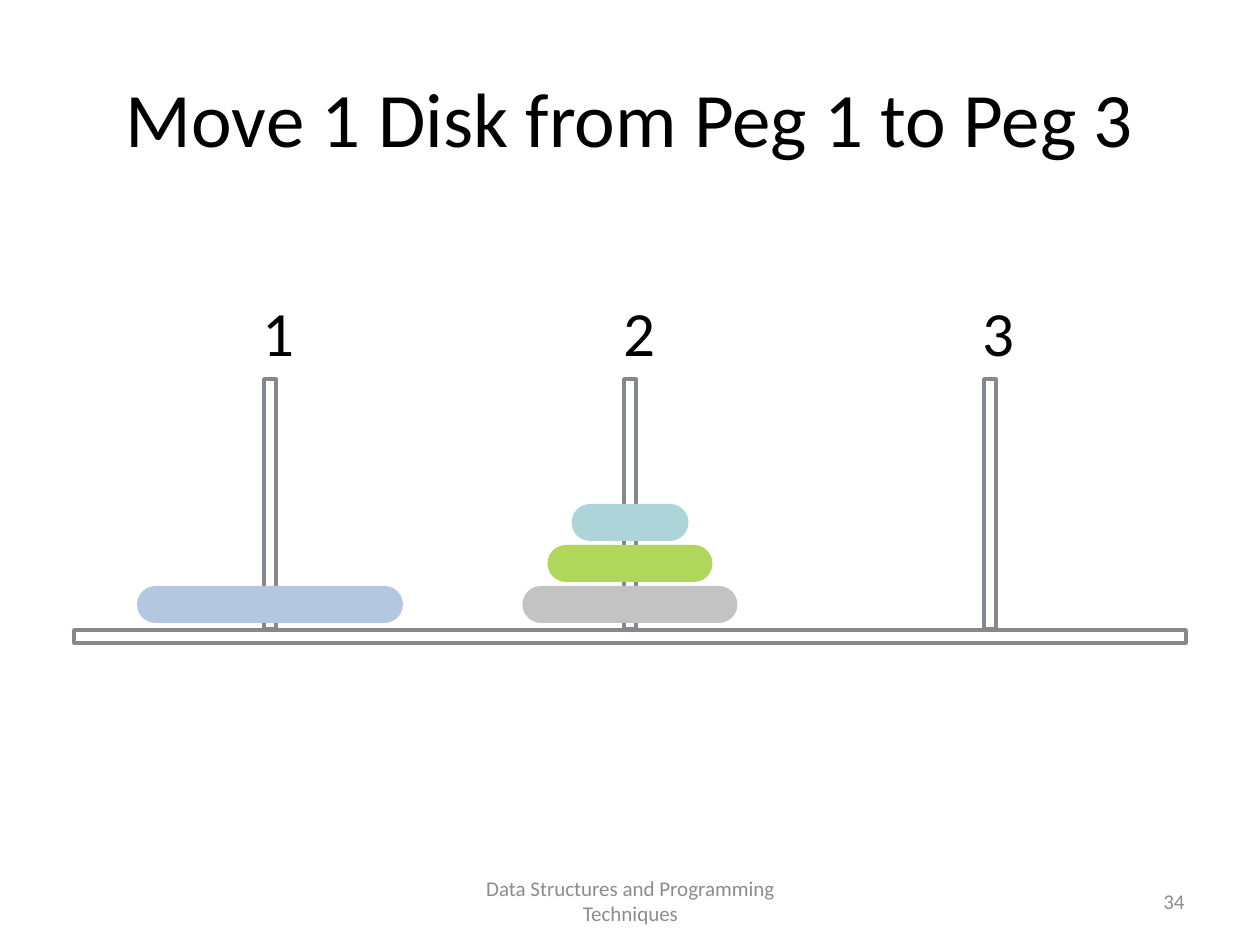
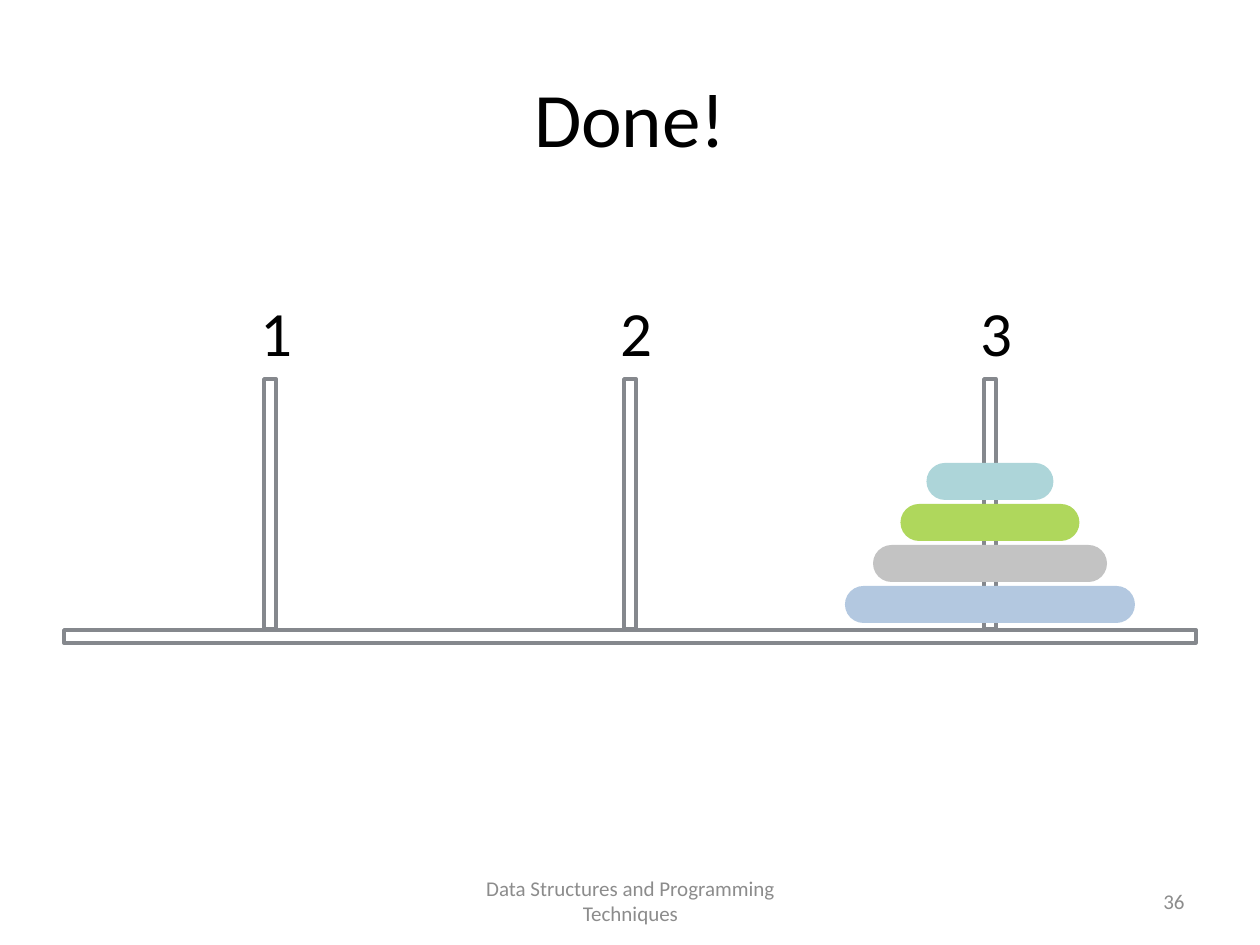
from pptx import Presentation
from pptx.dml.color import RGBColor
from pptx.enum.shapes import MSO_SHAPE
from pptx.enum.text import MSO_ANCHOR, MSO_AUTO_SIZE, PP_ALIGN
from pptx.util import Pt

RECTANGLE, ROUNDED = MSO_SHAPE.RECTANGLE, MSO_SHAPE.ROUNDED_RECTANGLE
MIDDLE = MSO_ANCHOR.MIDDLE
GROW, FIXED = MSO_AUTO_SIZE.SHAPE_TO_FIT_TEXT, MSO_AUTO_SIZE.NONE
CENTER, RIGHT = PP_ALIGN.CENTER, PP_ALIGN.RIGHT

PIXELS_PER_INCH = 126
FONT = "Calibri"
BLACK, FOOTER_GRAY, WOOD = "000000", "8C8C8C", "85888D"
BLUE, GRAY, GREEN, TEAL = "B3C8E0", "C3C3C3", "AFD75C", "ADD5D9"
FOOTER = "Data Structures and Programming Techniques"

PEG_CENTERS = [270, 630, 990]
PEG_WIDTH, PEG_TOP, BASE_TOP = 12, 379, 630
DISK_HEIGHT, DISK_STEP, LOWEST_DISK_TOP = 37, 41, 586

SLIDES = [
    {
        "title": "Move 1 Disk from Peg 1 to Peg 3",
        "number": "34",
        "base_width": 1112,
        "label": (30, 286, 91),
        "label_wraps": True,
        "stacks": {0: [(266, BLUE)], 1: [(215, GRAY), (165, GREEN), (117, TEAL)]},
    },
    {
        "title": "Done!",
        "number": "36",
        "base_width": 1132,
        "label": (34, 304, 55),
        "label_wraps": False,
        "stacks": {2: [(290, BLUE), (234, GRAY), (179, GREEN), (127, TEAL)]},
    },
]


def px(*lengths):
    return [round(length * 914400 / PIXELS_PER_INCH) for length in lengths]


def write(box, text, size, color, align=CENTER, wrap=True, fit=FIXED):
    frame = box.text_frame
    frame.text = text
    frame.vertical_anchor = MIDDLE
    frame.word_wrap = wrap
    frame.auto_size = fit
    para = frame.paragraphs[0]
    para.alignment = align
    para.font.name = FONT
    para.font.size = Pt(size)
    para.font.color.rgb = RGBColor.from_string(color)
    return frame


deck = Presentation()
deck.slide_width, deck.slide_height = px(1260, 945)
title_only = deck.slide_layouts[5]

for content in SLIDES:
    page = deck.slides.add_slide(title_only)
    title = page.shapes.title
    title.left, title.top, title.width, title.height = px(63, 38, 1134, 157)
    write(title, content["title"], 44, BLACK)

    base_width = content["base_width"]
    bars = [(630 - base_width // 2, BASE_TOP, base_width, 13)]
    for center in PEG_CENTERS:
        bars.append((center - PEG_WIDTH // 2, PEG_TOP, PEG_WIDTH, BASE_TOP - PEG_TOP - 1))
    for bar in bars:
        box = page.shapes.add_shape(RECTANGLE, *px(*bar))
        box.shadow.inherit = False
        box.fill.background()
        box.line.color.rgb = RGBColor.from_string(WOOD)
        box.line.width = Pt(2)

    for peg, disks in content["stacks"].items():
        for level, (width, color) in enumerate(disks):
            left = PEG_CENTERS[peg] - width / 2
            top = LOWEST_DISK_TOP - level * DISK_STEP
            disk = page.shapes.add_shape(ROUNDED, *px(left, top, width, DISK_HEIGHT))
            disk.adjustments[0] = 0.5
            disk.shadow.inherit = False
            disk.fill.solid()
            disk.fill.fore_color.rgb = RGBColor.from_string(color)
            disk.line.fill.background()

    width, top, height = content["label"]
    for number, center in enumerate(PEG_CENTERS, 1):
        label = page.shapes.add_textbox(*px(center - width // 2, top, width, height))
        frame = write(label, str(number), 36, BLACK, wrap=content["label_wraps"], fit=GROW)
        frame.margin_left, frame.margin_top, frame.margin_right, frame.margin_bottom = px(8, 8, 8, 8)

    footer = page.shapes.add_textbox(*px(431, 876, 399, 50))
    write(footer, FOOTER, 12, FOOTER_GRAY)
    page_number = page.shapes.add_textbox(*px(903, 876, 294, 50))
    write(page_number, content["number"], 12, FOOTER_GRAY, RIGHT)

deck.save("out.pptx")
